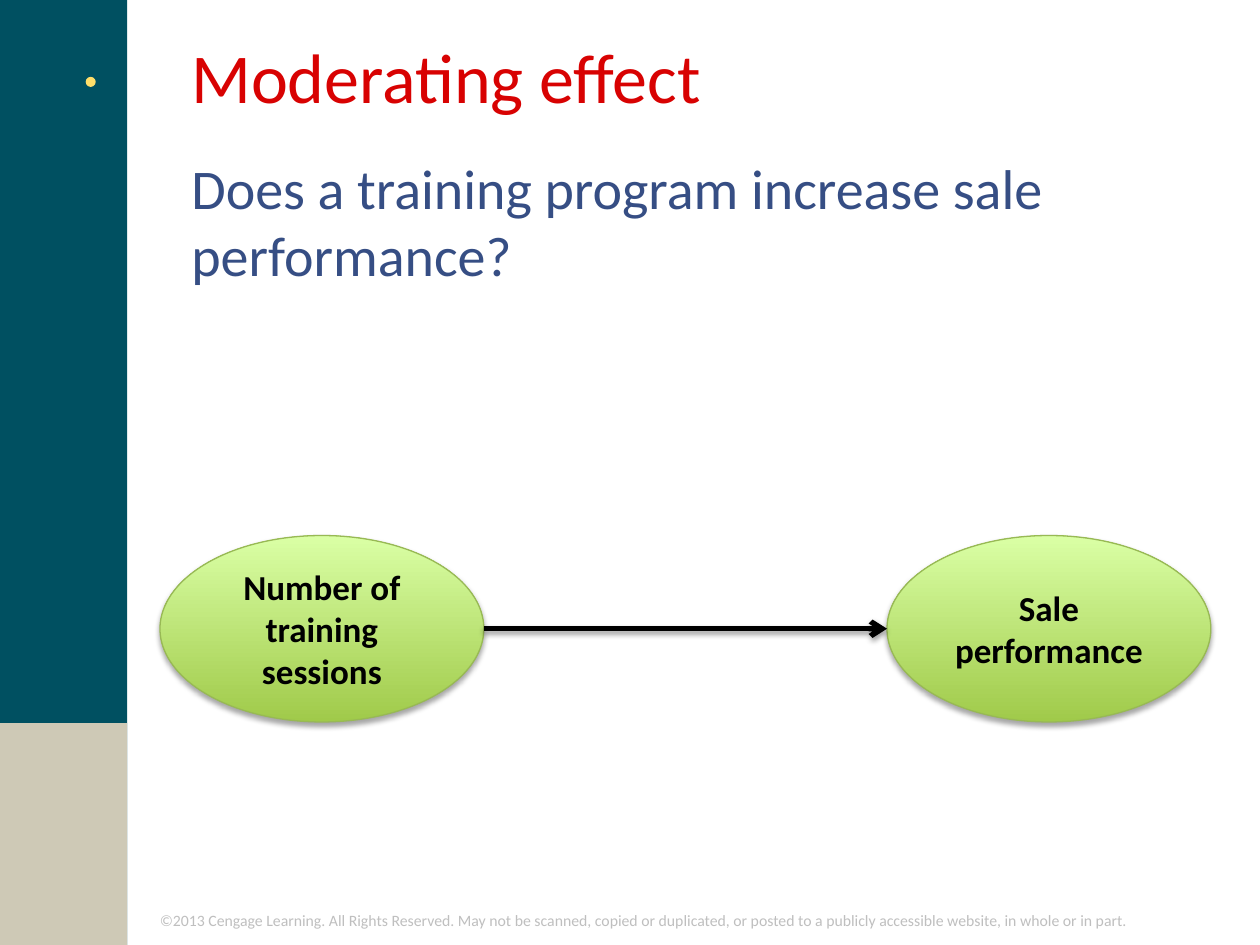
"""Build a slide that shows a moderating effect between two variables."""
from dataclasses import dataclass

from lxml.etree import SubElement
from pptx import Presentation
from pptx.dml.color import RGBColor
from pptx.enum.shapes import MSO_CONNECTOR as Connector, MSO_SHAPE as Preset
from pptx.enum.text import MSO_ANCHOR as Anchor, PP_ALIGN as Align
from pptx.oxml.ns import qn
from pptx.util import Inches, Pt


@dataclass(frozen=True)
class Area:
    left: float
    top: float
    width: float
    height: float

    def lengths(self):
        return [Inches(n) for n in (self.left, self.top, self.width, self.height)]


@dataclass(frozen=True)
class Variable:
    text: str
    left: float


OVAL_TOP, OVAL_WIDTH, OVAL_HEIGHT = 4.25, 2.57, 1.48
CAUSE = Variable("Number of training sessions", 1.27)
RESULT = Variable("Sale performance", 7.04)


def color(code: str) -> RGBColor:
    return RGBColor.from_string(code)


def write(box, text: str, *, size: float, ink: str, bold: bool = False,
          align=Align.LEFT, anchor=Anchor.TOP) -> None:
    frame = box.text_frame
    frame.word_wrap = True
    frame.vertical_anchor = anchor
    para = frame.paragraphs[0]
    para.alignment = align
    span = para.add_run()
    span.text = text
    span.font.name = "Calibri"
    span.font.size = Pt(size)
    span.font.bold = bold
    span.font.color.rgb = color(ink)


def add_text(page, area: Area, text: str, **style) -> None:
    write(page.shapes.add_textbox(*area.lengths()), text, **style)


def add_plain(page, preset, area: Area, fill: str) -> None:
    shape = page.shapes.add_shape(preset, *area.lengths())
    shape.shadow.inherit = False
    shape.fill.solid()
    shape.fill.fore_color.rgb = color(fill)
    shape.line.fill.background()


def add_shadow(shape, distance: float, opacity: int) -> None:
    effects = SubElement(shape._element.spPr, qn("a:effectLst"))
    shadow = SubElement(effects, qn("a:outerShdw"), blurRad=str(Pt(3.1)),
                        dist=str(Pt(distance)), dir="5400000", rotWithShape="0")
    black = SubElement(shadow, qn("a:srgbClr"), val="000000")
    SubElement(black, qn("a:alpha"), val=str(opacity * 1000))


def add_variable(page, variable: Variable) -> None:
    area = Area(variable.left, OVAL_TOP, OVAL_WIDTH, OVAL_HEIGHT)
    oval = page.shapes.add_shape(Preset.OVAL, *area.lengths())
    oval.fill.gradient()
    oval.fill.gradient_angle = 90
    for stop, code in zip(oval.fill.gradient_stops, ("A0CA4A", "DAFFA5")):
        stop.color.rgb = color(code)
    oval.line.color.rgb = color("98B955")
    oval.line.width = Pt(0.75)
    add_shadow(oval, 1.8, 35)
    write(oval, variable.text, size=20, ink="000000", bold=True,
          align=Align.CENTER, anchor=Anchor.MIDDLE)


def add_effect(page, cause: Variable, result: Variable) -> None:
    middle = Inches(OVAL_TOP + OVAL_HEIGHT / 2)
    arrow = page.shapes.add_connector(
        Connector.STRAIGHT, Inches(result.left), middle,
        Inches(cause.left + OVAL_WIDTH), middle)
    arrow.line.color.rgb = color("000000")
    arrow.line.width = Pt(3)
    SubElement(arrow.line._get_or_add_ln(), qn("a:headEnd"), type="arrow")
    add_shadow(arrow, 1.6, 38)


def main() -> None:
    deck = Presentation()
    deck.slide_width, deck.slide_height = Inches(10), Inches(7.5)
    page = deck.slides.add_slide(deck.slide_layouts[6])

    add_plain(page, Preset.RECTANGLE, Area(0, 0, 1.01, 7.5), "005061")
    add_plain(page, Preset.RECTANGLE, Area(0, 5.74, 1.01, 1.76), "CEC9B6")
    add_plain(page, Preset.OVAL, Area(0.68, 0.61, 0.08, 0.08), "FFDE6A")
    add_text(page, Area(1.17, 7.18, 8.83, 0.25),
             "©2013 Cengage Learning. All Rights Reserved. May not be scanned, "
             "copied or duplicated, or posted to a publicly accessible website, "
             "in whole or in part.", size=9, ink="BFBFBF")
    add_text(page, Area(1.42, 0.22, 8.73, 0.96), "Moderating effect",
             size=40, ink="D80202")
    add_text(page, Area(1.42, 1.17, 8.19, 1.67),
             "Does a training program increase sale performance?",
             size=32, ink="364E84")

    for variable in (CAUSE, RESULT):
        add_variable(page, variable)
    add_effect(page, CAUSE, RESULT)
    deck.save("out.pptx")


if __name__ == "__main__":
    main()
